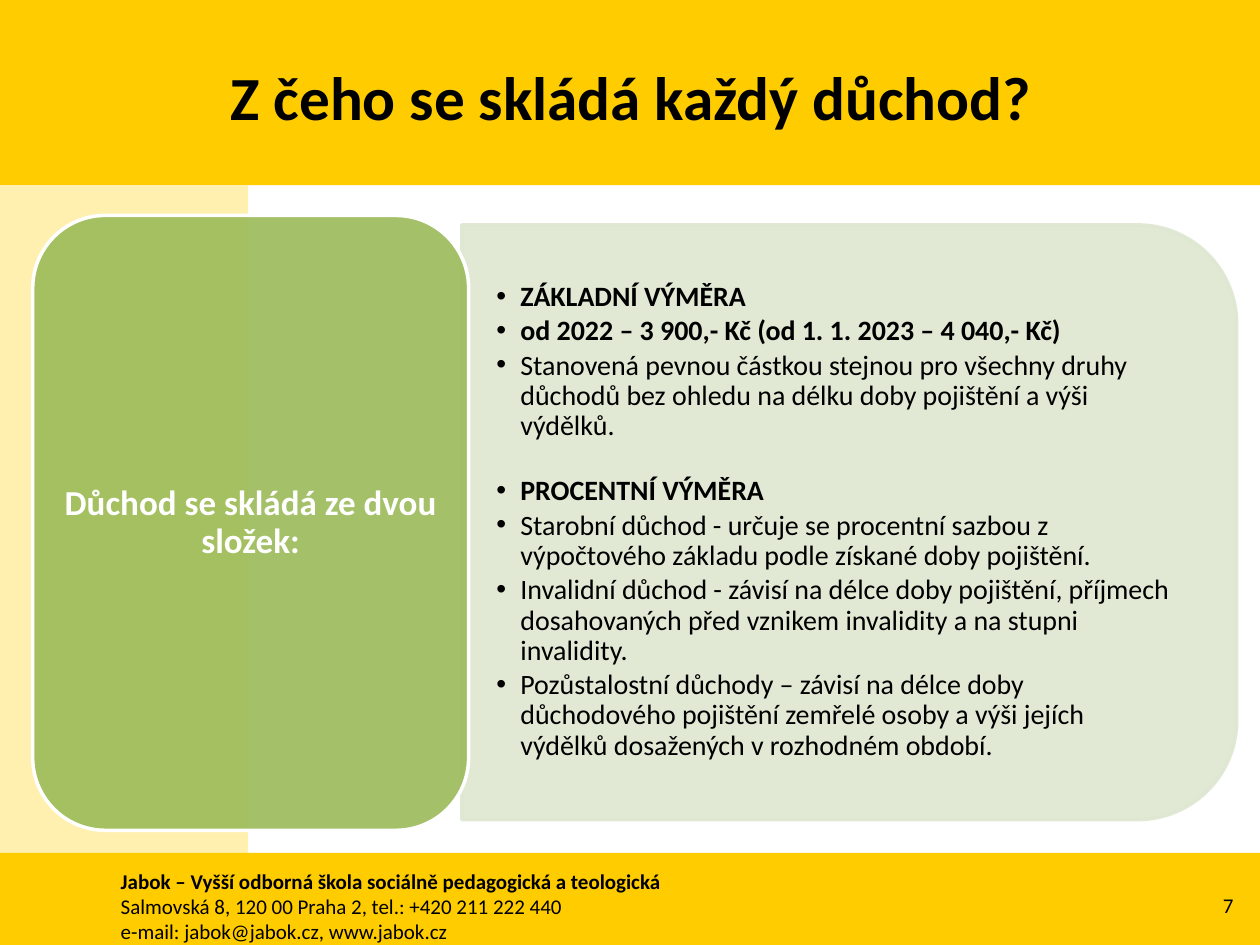
from lxml.etree import SubElement
from pptx import Presentation
from pptx.dml.color import RGBColor
from pptx.enum.shapes import MSO_SHAPE
from pptx.enum.text import MSO_ANCHOR, MSO_AUTO_SIZE, PP_ALIGN
from pptx.oxml.ns import qn
from pptx.util import Inches, Pt

COLORS = {
    "yellow": "FFCC00",
    "pale yellow": "FFF0AF",
    "green": "9BBB59",
    "pale green": "DEE7D1",
    "white": "FFFFFF",
    "black": "000000",
}


def add_block(kind, place, fill, line=None, alphas=()):
    """Add a filled shape; alphas are the opacities of fill and line."""
    block = slide.shapes.add_shape(kind, *map(Inches, place))
    block.shadow.inherit = False
    block.fill.solid()
    block.fill.fore_color.rgb = RGBColor.from_string(COLORS[fill])
    if line:
        block.line.color.rgb = RGBColor.from_string(COLORS[line])
        block.line.width = Pt(2)
    else:
        block.line.fill.background()
    fills = block.element.spPr.iter(qn("a:solidFill"))
    for solid, alpha in zip(fills, alphas):
        SubElement(solid[0], qn("a:alpha"), val=str(alpha * 1000))
    return block


def write(box, rows, size, color="black", margins=(0.1, 0.05),
          anchor=MSO_ANCHOR.MIDDLE, bullet=False, **layout):
    """Fill a box with (text, bold, paragraph format) rows."""
    frame = box.text_frame
    frame.word_wrap = True
    frame.auto_size = MSO_AUTO_SIZE.NONE
    frame.vertical_anchor = anchor
    frame.margin_left = frame.margin_right = Inches(margins[0])
    frame.margin_top = frame.margin_bottom = Inches(margins[1])
    for number, (text, bold, extra) in enumerate(rows):
        para = frame.add_paragraph() if number else frame.paragraphs[0]
        for name, value in {**layout, **extra}.items():
            setattr(para, name, value)
        if bullet:
            properties = para._p.get_or_add_pPr()
            properties.set("marL", str(Inches(0.19)))
            properties.set("indent", str(Inches(-0.19)))
            SubElement(properties, qn("a:buFont"), typeface="Arial")
            SubElement(properties, qn("a:buChar"), char="•")
        span = para.add_run()
        span.text = text
        font_format = {"name": "Calibri", "size": Pt(size), "bold": bold}
        for name, value in font_format.items():
            setattr(span.font, name, value)
        span.font.color.rgb = RGBColor.from_string(COLORS[color])


deck = Presentation()
deck.slide_width, deck.slide_height = Inches(10), Inches(7.5)
slide = deck.slides.add_slide(deck.slide_layouts[5])

# Background bands
for place, fill in [
    ((0, 0, 10, 1.47), "yellow"),
    ((0, 1.47, 1.97, 6.03), "pale yellow"),
    ((0, 6.77, 10, 0.76), "yellow"),
]:
    add_block(MSO_SHAPE.RECTANGLE, place, fill)

# Footer with school address and page number
address = slide.shapes.add_textbox(*map(Inches, (0.86, 6.84, 8.19, 0.71)))
write(address, [
    ("Jabok – Vyšší odborná škola sociálně pedagogická a teologická", True, {}),
    ("Salmovská 8, 120 00 Praha 2, tel.: +420 211 222 440", False, {}),
    ("e-mail: jabok@jabok.cz, www.jabok.cz", False, {}),
], 12, anchor=MSO_ANCHOR.TOP)
page_number = slide.shapes.add_textbox(*map(Inches, (9.26, 6.98, 0.63, 0.4)))
write(page_number, [("7", False, {})], 12, alignment=PP_ALIGN.RIGHT)

# Title, brought in front of the bands
title = slide.shapes.title
title.left, title.top, title.width, title.height = map(Inches, (0.51, 0.14, 9, 1.25))
write(title, [("Z čeho se skládá každý důchod?", True, {})], 35,
      alignment=PP_ALIGN.CENTER)
title.element.getparent().append(title.element)

# Panel with the two components
panel = add_block(MSO_SHAPE.ROUND_2_SAME_RECTANGLE, (4.38, 1.07, 4.72, 6.15),
                  "pale green", "pale green", (90, 90))
panel.rotation = 90
justified = {"alignment": PP_ALIGN.JUSTIFY}
components = slide.shapes.add_textbox(*map(Inches, (3.67, 2.01, 5.92, 4.26)))
write(components, [
    ("ZÁKLADNÍ VÝMĚRA", True, justified),
    ("od 2022 – 3 900,- Kč (od 1. 1. 2023 – 4 040,- Kč)", True, justified),
    ("Stanovená pevnou částkou stejnou pro všechny druhy důchodů bez ohledu "
     "na délku doby pojištění a výši výdělků.", False, {"space_after": Pt(20)}),
    ("PROCENTNÍ VÝMĚRA", True, justified),
    ("Starobní důchod - určuje se procentní sazbou z výpočtového základu "
     "podle získané doby pojištění.", False, {}),
    ("Invalidní důchod - závisí na délce doby pojištění, příjmech dosahovaných "
     "před vznikem invalidity a na stupni invalidity.", False, {}),
    ("Pozůstalostní důchody – závisí na délce doby důchodového pojištění "
     "zemřelé osoby a výši jejích výdělků dosažených v rozhodném období.",
     False, {}),
], 16, margins=(0.27, 0.14), bullet=True, line_spacing=0.9, space_after=Pt(2.4))

# Green heading block
heading = add_block(MSO_SHAPE.ROUNDED_RECTANGLE, (0.26, 1.71, 3.46, 4.88),
                    "green", "white", (90,))
write(heading, [("Důchod se skládá ze dvou složek:", True, {})], 20, "white",
      margins=(0.08, 0.04), alignment=PP_ALIGN.CENTER, line_spacing=0.9,
      space_after=Pt(7))

deck.save("out.pptx")
